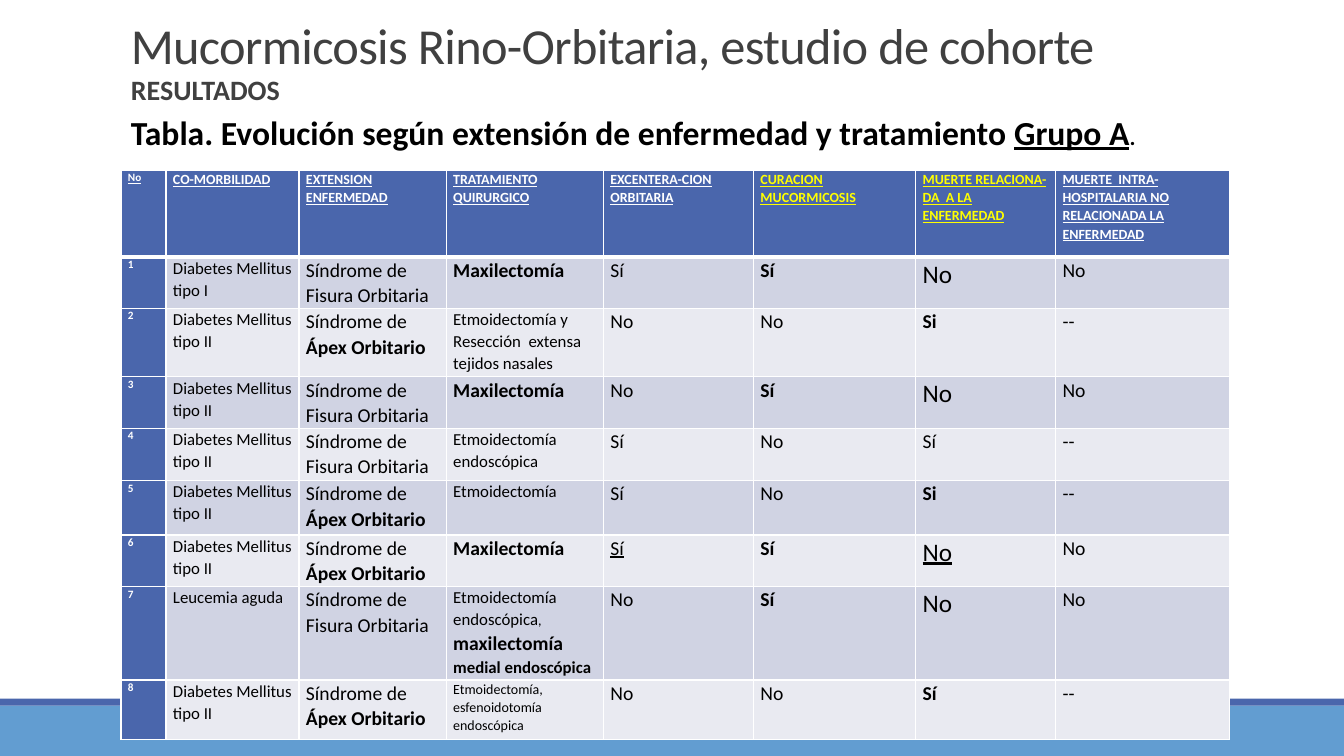
from pptx import Presentation
from pptx import util as u
from pptx.dml import color
from pptx.enum import shapes, text
from pptx.oxml import parse_xml
from pptx.oxml.ns import nsdecls

Pt = u.Pt
BLUE, WHITE, YELLOW, BLACK, GREY = "4A66AC", "FFFFFF", "FFFF00", "000000", "404040"


def add_run(paragraph, words, size, hue, bold=False, underline=False):
    run = paragraph.add_run()
    run.text = words
    font = run.font
    font.name, font.size, font.bold, font.underline = "Calibri", Pt(size), bold, underline
    font.color.rgb = color.RGBColor.from_string(hue)
    return run


def add_box(left, top, width, height, anchor, wrap=True):
    frame = slide.shapes.add_textbox(Pt(left), Pt(top), Pt(width), Pt(height)).text_frame
    frame.word_wrap = wrap
    frame.vertical_anchor = anchor
    return frame.paragraphs[0]


deck = Presentation()
deck.slide_width, deck.slide_height = Pt(960), Pt(540)
slide = deck.slides.add_slide(deck.slide_layouts[6])

for top, height, hue in ((504, 36, "629DD1"), (499, 5, BLUE)):
    band = slide.shapes.add_shape(shapes.MSO_SHAPE.RECTANGLE, 0, Pt(top), Pt(960), Pt(height))
    band.shadow.inherit = False
    band.fill.solid()
    band.fill.fore_color.rgb = color.RGBColor.from_string(hue)
    band.line.fill.background()

title = add_box(86.4, 10.8, 792, 46, text.MSO_ANCHOR.BOTTOM)
title.line_spacing = 0.85
heading = add_run(title, "Mucormicosis Rino-Orbitaria, estudio de cohorte", 36, GREY)
heading.font._element.set("spc", "-50")

section = add_box(86.4, 51.1, 792, 399, text.MSO_ANCHOR.TOP)
section.line_spacing = 0.9
add_run(section, "RESULTADOS", 20, GREY, True)

headers = [
    ("No", 8, WHITE), ("CO-MORBILIDAD", 10, WHITE), ("EXTENSION ENFERMEDAD", 10, WHITE),
    ("TRATAMIENTO QUIRURGICO", 10, WHITE), ("EXCENTERA-CION ORBITARIA", 10, WHITE),
    ("CURACION MUCORMICOSIS", 10, YELLOW),
    ("MUERTE RELACIONA-DA  A LA\nENFERMEDAD", 10, YELLOW),
    ("MUERTE  INTRA-HOSPITALARIA NO RELACIONADA LA ENFERMEDAD", 10, WHITE),
]

diabetes = [("Diabetes Mellitus tipo II", 12)]
fisura = [("Síndrome de Fisura Orbitaria", 14)]
apex = [("Síndrome de ", 14), ("Ápex Orbitario", 14, True)]
maxilectomia = [("Maxilectomía", 14, True)]
yes, no, dashes = [("Sí", 14)], [("No", 14)], [("--", 14)]
cured, survived = [("Sí", 14, True)], [("No", 18)]
died = [("Si", 14, True)]

patients = [
    [[("Diabetes Mellitus tipo I", 12)], fisura, maxilectomia, yes, cured, survived, no],
    [diabetes, apex, [("Etmoidectomía y Resección  extensa tejidos nasales", 12)],
     no, no, died, dashes],
    [diabetes, fisura, maxilectomia, no, cured, survived, no],
    [diabetes, fisura, [("Etmoidectomía endoscópica", 12)], yes, no, yes, dashes],
    [diabetes, apex, [("Etmoidectomía", 12)], yes, no, died, dashes],
    [diabetes, apex, maxilectomia, [("Sí", 14, False, True)], cured,
     [("No", 18, False, True)], no],
    [[("Leucemia aguda", 12)], fisura,
     [("Etmoidectomía endoscópica", 12), (", ", 10), ("maxilectomía", 14, True),
      (" ", 10, True), ("medial endoscópica", 12, True)], no, cured, survived, no],
    [diabetes, apex, [("Etmoidectomía, esfenoidotomía endoscópica", 10)],
     no, no, cured, dashes],
]

widths = [32.2, 95, 105.2, 112.3, 107.2, 115.8, 100, 124.5]
heights = [61.9, 36.7, 49, 36.7, 37.4, 38.9, 36.7, 67, 42.5]
results = slide.shapes.add_table(len(heights), len(widths), Pt(86.4), Pt(121.6),
                                 Pt(sum(widths)), Pt(sum(heights))).table
for column, width in zip(results.columns, widths):
    column.width = Pt(width)
for row, height in zip(results.rows, heights):
    row.height = Pt(height)

for r, row in enumerate(results.rows):
    for c, cell in enumerate(row.cells):
        cell.margin_left = cell.margin_right = Pt(5)
        cell.margin_top = cell.margin_bottom = 0
        for side in "LRTB":
            thick = (r, side) in ((0, "B"), (1, "T"))
            cell._tc.get_or_add_tcPr().append(parse_xml(
                f'<a:ln{side} {nsdecls("a")} w="{Pt(3 if thick else 1)}"><a:solidFill>'
                f'<a:srgbClr val="{WHITE}"/></a:solidFill></a:ln{side}>'))
        fill = BLUE if r == 0 or c == 0 else "D0D3E3" if r % 2 else "E9EAF1"
        cell.fill.solid()
        cell.fill.fore_color.rgb = color.RGBColor.from_string(fill)

        if r == 0:
            label, size, hue = headers[c]
            lines = [[(line, size, True, True)] for line in label.split("\n")]
        elif c == 0:
            lines, hue = [[(str(r), 8, True)]], WHITE
        else:
            lines, hue = [patients[r - 1][c - 1]], BLACK
        for i, line in enumerate(lines):
            paragraph = cell.text_frame.add_paragraph() if i else cell.text_frame.paragraphs[0]
            paragraph.line_spacing = 1.07
            for words, size, *emphasis in line:
                add_run(paragraph, words, size, hue, *emphasis)

caption = add_box(86.4, 76.3, 738.7, 36, text.MSO_ANCHOR.MIDDLE, wrap=False)
caption.alignment = text.PP_ALIGN.JUSTIFY
add_run(caption, "Tabla. Evolución según extensión de enfermedad y tratamiento ", 24, BLACK, True)
add_run(caption, "Grupo A", 24, BLACK, True, True)
add_run(caption, ".", 16, BLACK, True)

deck.save("out.pptx")
